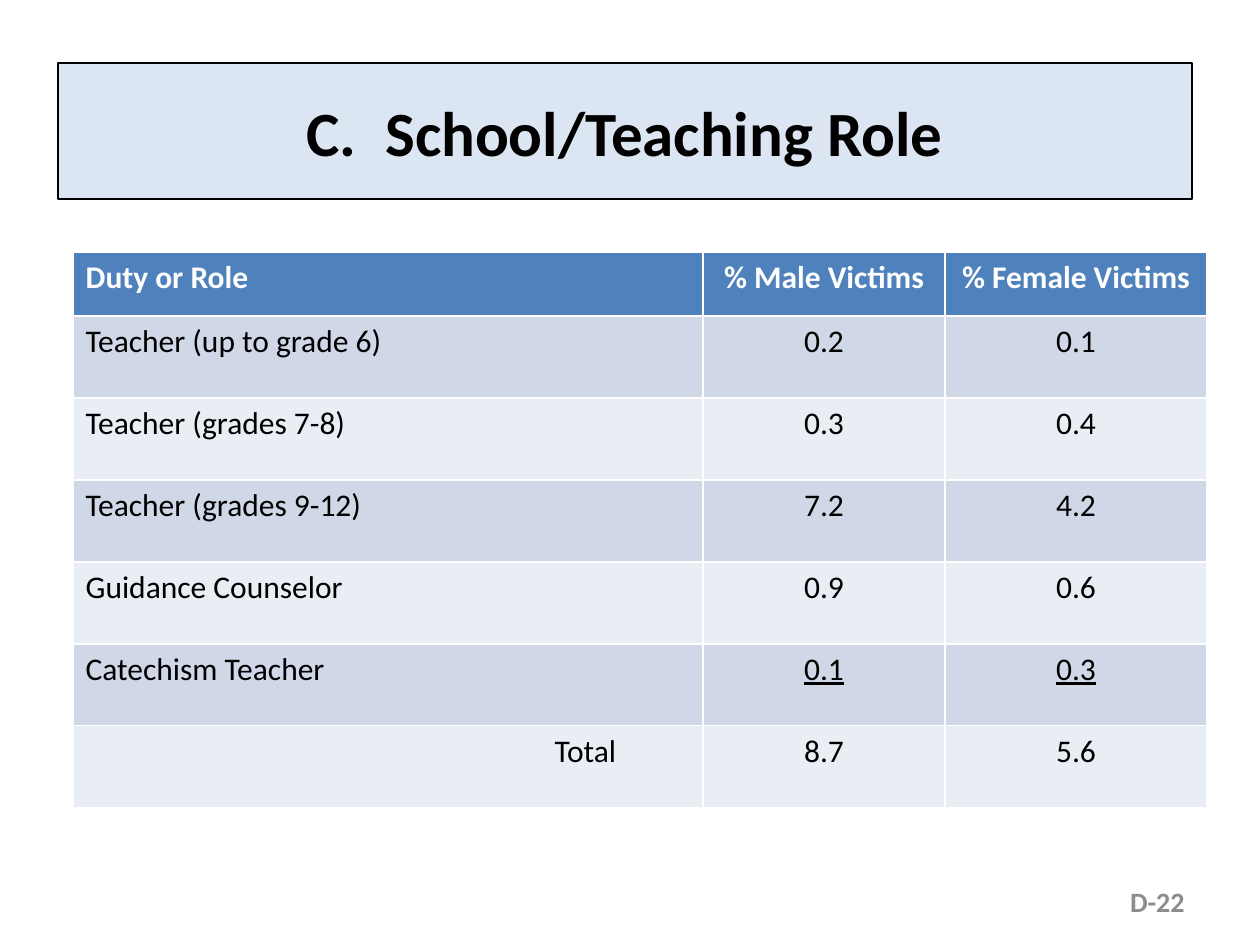
"""Build the slide on school and teaching roles."""
from dataclasses import dataclass

from pptx import Presentation
from pptx.dml.color import RGBColor
from pptx.enum.shapes import MSO_SHAPE as Shape
from pptx.enum.text import MSO_ANCHOR as Anchor, PP_ALIGN as Align
from pptx.util import Inches, Pt

BLACK = RGBColor(0x00, 0x00, 0x00)
WHITE = RGBColor(0xFF, 0xFF, 0xFF)
GREY = RGBColor(0x8C, 0x8C, 0x8C)
PALE = RGBColor(0xDC, 0xE6, 0xF2)
BLUE = RGBColor(0x4F, 0x81, 0xBD)
BANDS = (RGBColor(0xD0, 0xD8, 0xE8), RGBColor(0xE9, 0xED, 0xF4))
WIDTHS = (5, 1.92, 2.08)
HEAD_HIGH, ROW_HIGH = 0.51, 0.65


@dataclass
class Row:
    role: str
    male: str
    female: str
    head: bool = False
    under: bool = False
    total: bool = False


ROWS = [
    Row("Duty or Role", "% Male Victims", "% Female Victims", head=True),
    Row("Teacher (up to grade 6)", "0.2", "0.1"),
    Row("Teacher (grades 7-8)", "0.3", "0.4"),
    Row("Teacher (grades 9-12)", "7.2", "4.2"),
    Row("Guidance Counselor", "0.9", "0.6"),
    Row("Catechism Teacher", "0.1", "0.3", under=True),
    Row("Total", "8.7", "5.6", total=True),
]


def write(frame, text: str, size: int, color: RGBColor, bold: bool,
          align: Align, under: bool = False) -> None:
    frame.text = text
    para = frame.paragraphs[0]
    para.alignment = align
    font = para.runs[0].font
    font.name, font.size, font.bold = "Calibri", Pt(size), bold
    font.underline = under
    font.color.rgb = color


def draw_title(slide) -> None:
    box = slide.shapes.add_shape(Shape.RECTANGLE, Inches(0.46), Inches(0.5),
                                 Inches(9), Inches(1.08))
    box.shadow.inherit = False
    box.fill.solid()
    box.fill.fore_color.rgb = PALE
    box.line.color.rgb = BLACK
    box.line.width = Pt(1.5)
    box.text_frame.vertical_anchor = Anchor.MIDDLE
    write(box.text_frame, "C.  School/Teaching Role", 36, BLACK, True, Align.CENTER)


def fill_row(table, index: int, row: Row) -> None:
    table.rows[index].height = Inches(HEAD_HIGH if row.head else ROW_HIGH)
    for col, text in enumerate((row.role, row.male, row.female)):
        cell = table.cell(index, col)
        cell.fill.solid()
        cell.fill.fore_color.rgb = BLUE if row.head else BANDS[(index - 1) % 2]
        align = Align.CENTER if col else Align.LEFT
        if row.total and not col:
            align = Align.RIGHT
            cell.margin_right = Inches(0.69)
        write(cell.text_frame, text, 18, WHITE if row.head else BLACK, row.head,
              align, row.under and col > 0)


def draw_table(slide) -> None:
    high = HEAD_HIGH + ROW_HIGH * (len(ROWS) - 1)
    table = slide.shapes.add_table(len(ROWS), len(WIDTHS), Inches(0.58), Inches(2),
                                   Inches(sum(WIDTHS)), Inches(high)).table
    for column, width in zip(table.columns, WIDTHS):
        column.width = Inches(width)
    for index, row in enumerate(ROWS):
        fill_row(table, index, row)


def draw_number(slide) -> None:
    box = slide.shapes.add_textbox(Inches(7.17), Inches(6.95), Inches(2.33), Inches(0.4))
    frame = box.text_frame
    frame.word_wrap = True
    frame.vertical_anchor = Anchor.MIDDLE
    write(frame, "D-22", 16, GREY, True, Align.RIGHT)


def main() -> None:
    deck = Presentation()
    deck.slide_width, deck.slide_height = Inches(10), Inches(7.5)
    slide = deck.slides.add_slide(deck.slide_layouts[6])
    draw_title(slide)
    draw_table(slide)
    draw_number(slide)
    deck.save("out.pptx")


if __name__ == "__main__":
    main()
